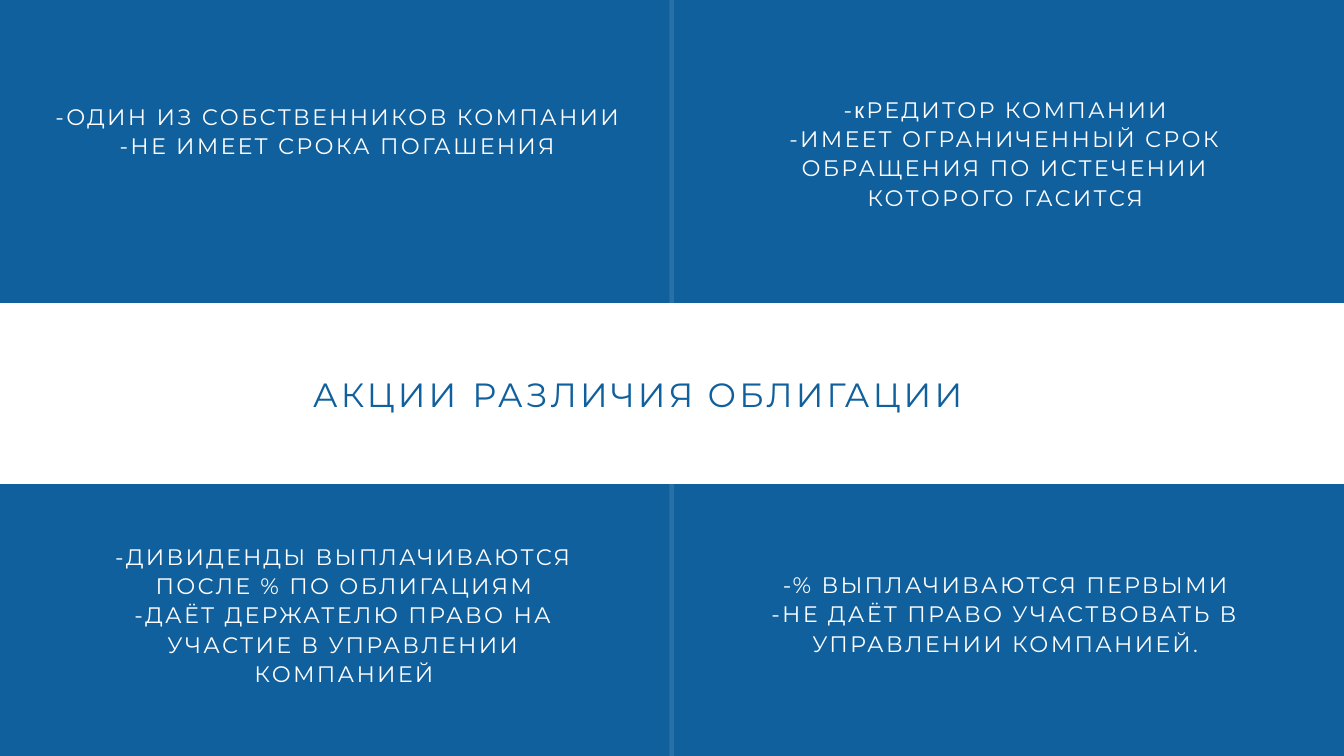
from pptx import Presentation
from pptx.dml.color import RGBColor as RGB
from pptx.enum.shapes import MSO_SHAPE as Geo
from pptx.enum.text import MSO_AUTO_SIZE as Fit, PP_ALIGN as Align
from pptx.oxml import parse_xml
from pptx.oxml.ns import nsdecls, qn
from pptx.util import Pt

BLUE, WHITE = "10609D", "FFFFFF"
SANS, PLAIN = "Montserrat", "Arial"
BODY = {"size": 24, "lead": 31.2, "gap": 2.4, "hue": WHITE}
HEAD = {"size": 36, "lead": 43.2, "gap": 3.4, "hue": BLUE}

# Four cells: place in points, then paragraphs made of (text, font) runs
CELLS = [
    ((49.7, 108, 623.5, 60.5), [
        [("-ОДИН ИЗ СОБСТВЕННИКОВ КОМПАНИИ", SANS)],
        [("-НЕ ИМЕЕТ СРОКА ПОГАШЕНИЯ", SANS)]]),
    ((795.6, 100.8, 563, 122.4), [
        [("-", SANS), ("к", PLAIN), ("РЕДИТОР КОМПАНИИ", SANS)],
        [("-ИМЕЕТ ОГРАНИЧЕННЫЙ СРОК ОБРАЩЕНИЯ ПО ИСТЕЧЕНИИ "
          "КОТОРОГО ГАСИТСЯ", SANS)]]),
    ((80.6, 579.6, 576, 152.6), [
        [("-ДИВИДЕНДЫ ВЫПЛАЧИВАЮТСЯ ПОСЛЕ % ПО ОБЛИГАЦИЯМ", SANS)],
        [("-ДАЁТ ДЕРЖАТЕЛЮ ПРАВО НА УЧАСТИЕ В УПРАВЛЕНИИ КОМПАНИЕЙ", SANS)]]),
    ((795.6, 609.8, 563, 91.4), [
        [("-% ВЫПЛАЧИВАЮТСЯ ПЕРВЫМИ", SANS)],
        [("-НЕ ДАЁТ ПРАВО УЧАСТВОВАТЬ В УПРАВЛЕНИИ КОМПАНИЕЙ.", SANS)]]),
]


def paint(fill, hue):
    fill.solid()
    fill.fore_color.rgb = RGB.from_string(hue)


def add_bar(slide, place, hue, alpha=None):
    bar = slide.shapes.add_shape(Geo.RECTANGLE, *map(Pt, place))
    bar.shadow.inherit = False
    bar.line.fill.background()
    paint(bar.fill, hue)
    if alpha is not None:
        tint = bar._element.spPr.find(qn("a:solidFill"))[0]
        tint.append(parse_xml(
            f'<a:alpha {nsdecls("a")} val="{alpha * 1000}"/>'))


def add_text(slide, place, paras, look, align=Align.CENTER):
    frame = slide.shapes.add_textbox(*map(Pt, place)).text_frame
    form = {"word_wrap": True, "auto_size": Fit.SHAPE_TO_FIT_TEXT,
            "margin_left": 0, "margin_right": 0,
            "margin_top": 0, "margin_bottom": 0}
    for key, val in form.items():
        setattr(frame, key, val)
    for num, runs in enumerate(paras):
        para = frame.add_paragraph() if num else frame.paragraphs[0]
        para.alignment = align
        para.line_spacing = Pt(look["lead"])
        for text, face in runs:
            run = para.add_run()
            run.text = text
            for key, val in {"name": face, "size": Pt(look["size"])}.items():
                setattr(run.font, key, val)
            run.font.color.rgb = RGB.from_string(look["hue"])
            run._r.get_or_add_rPr().set("spc", str(round(look["gap"] * 100)))
    return frame


def set_tabs(para, first, stops):
    """Indent the first word and put left tab stops under the others."""
    props = para._p.get_or_add_pPr()
    props.set("marL", "0")
    props.set("indent", str(Pt(first)))
    tabs = "".join(f'<a:tab pos="{Pt(stop)}" algn="l"/>' for stop in stops)
    props.append(parse_xml(f'<a:tabLst {nsdecls("a")}>{tabs}</a:tabLst>'))


def main():
    deck = Presentation()
    deck.slide_width, deck.slide_height = Pt(1440), Pt(810)
    slide = deck.slides.add_slide(deck.slide_layouts[6])
    paint(slide.background.fill, BLUE)

    # Divider and title band
    add_bar(slide, (717.1, -10, 5, 835), WHITE, alpha=10)
    add_bar(slide, (-14.4, 324.7, 1487.5, 193.7), WHITE)

    # Headings, spaced by tabs
    title = "\t".join(["АКЦИИ", "РАЗЛИЧИЯ", "ОБЛИГАЦИИ"])
    frame = add_text(slide, (182.2, 400.3, 1196.6, 42.5),
                     [[(title, SANS)]], HEAD, Align.LEFT)
    set_tabs(frame.paragraphs[0], 153, (410, 767))

    # Comparison cells
    for place, paras in CELLS:
        add_text(slide, place, paras, BODY)

    deck.save("out.pptx")


if __name__ == "__main__":
    main()
